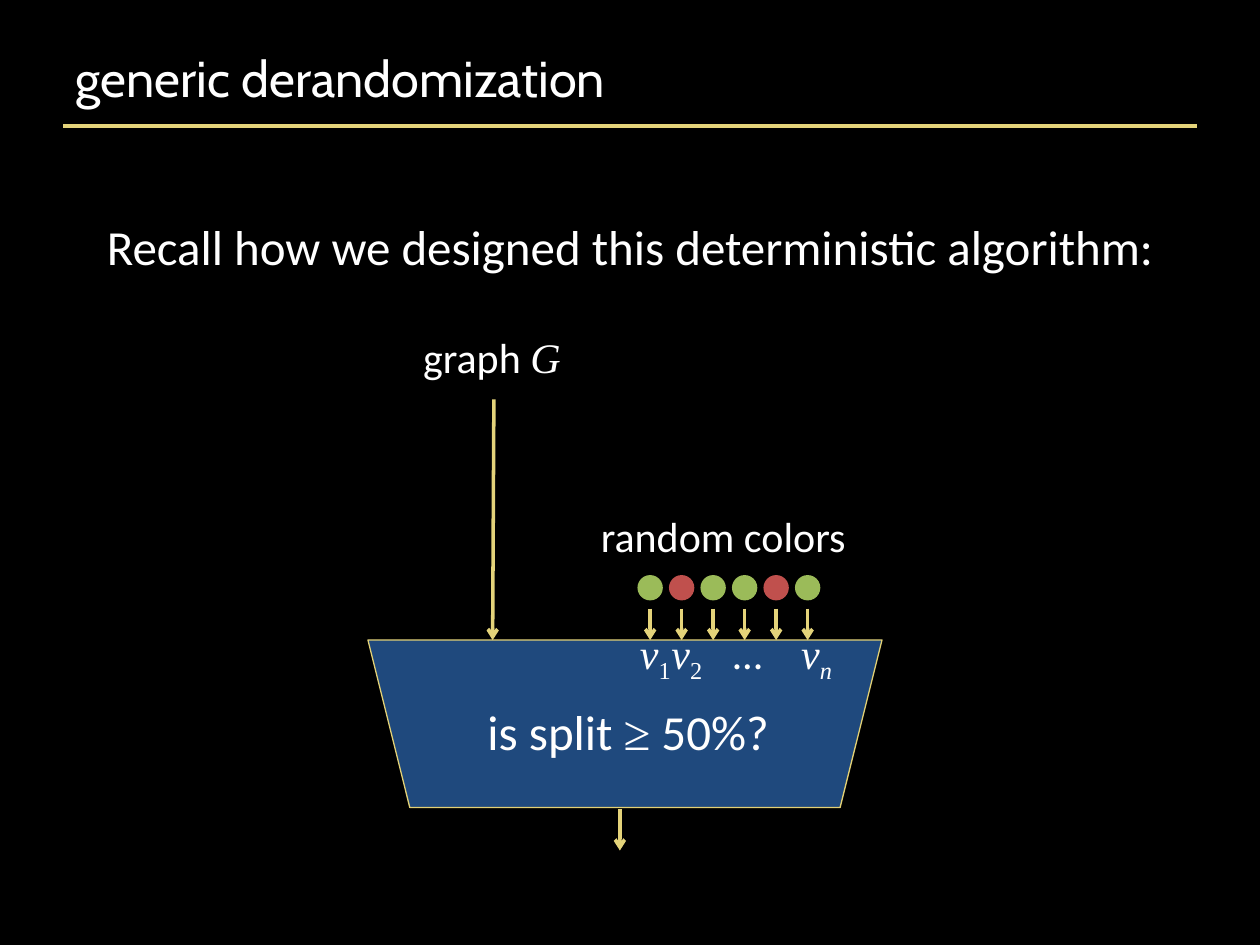
from dataclasses import dataclass

from lxml import etree
from pptx import Presentation
from pptx.dml.color import RGBColor
from pptx.enum.shapes import MSO_CONNECTOR, MSO_SHAPE
from pptx.enum.text import MSO_ANCHOR, MSO_AUTO_SIZE, PP_ALIGN
from pptx.oxml.ns import qn
from pptx.util import Inches, Pt

STRAIGHT = MSO_CONNECTOR.STRAIGHT
TRAPEZOID = MSO_SHAPE.TRAPEZOID
OVAL = MSO_SHAPE.OVAL
MIDDLE = MSO_ANCHOR.MIDDLE
GROW = MSO_AUTO_SIZE.SHAPE_TO_FIT_TEXT
LEFT = PP_ALIGN.LEFT
TITLE_ONLY = 5


@dataclass(frozen=True)
class Theme:
    background: str = "000000"
    text: str = "FFFFFF"
    arrow: str = "E4D37A"
    machine: str = "1F497D"
    machine_edge: str = "E2D075"
    green: str = "9BBB59"
    red: str = "C0504D"
    title_font: str = "Cabin"
    body_font: str = "Calibri"
    math_font: str = "Times New Roman"
    title_size: float = 28.8
    statement_size: float = 28
    label_size: float = 24


def color(hex_value):
    return RGBColor.from_string(hex_value)


def add_run(paragraph, text, *, font, size, fill, italic=False, subscript=False):
    run = paragraph.add_run()
    run.text = text
    run.font.name = font
    run.font.size = Pt(size)
    run.font.italic = italic
    run.font.color.rgb = color(fill)
    if subscript:
        run.font._element.set("baseline", "-25000")


class SlideBuilder:
    def __init__(self, slide, theme):
        self.slide = slide
        self.theme = theme
        slide.background.fill.solid()
        slide.background.fill.fore_color.rgb = color(theme.background)

    def title(self, text, left, top, width, height):
        shape = self.slide.shapes.title
        shape.left, shape.top = Inches(left), Inches(top)
        shape.width, shape.height = Inches(width), Inches(height)
        shape.text_frame.vertical_anchor = MIDDLE
        paragraph = shape.text_frame.paragraphs[0]
        paragraph.alignment = LEFT
        add_run(paragraph, text, font=self.theme.title_font,
                size=self.theme.title_size, fill=self.theme.text)

    def label(self, parts, left, top, width, height, size=None):
        """Add one line of text; parts are (text, format) pairs."""
        box = self.slide.shapes.add_textbox(
            Inches(left), Inches(top), Inches(width), Inches(height))
        box.text_frame.word_wrap = False
        box.text_frame.auto_size = GROW
        for text, changes in parts:
            style = {"font": self.theme.body_font, "fill": self.theme.text,
                     "size": size or self.theme.label_size, **changes}
            add_run(box.text_frame.paragraphs[0], text, **style)

    def line(self, start_x, start_y, end_x, end_y, arrowhead=True):
        connector = self.slide.shapes.add_connector(
            STRAIGHT, Inches(start_x), Inches(start_y), Inches(end_x), Inches(end_y))
        connector.line.color.rgb = color(self.theme.arrow)
        connector.line.width = Pt(2)
        if arrowhead:
            outline = connector.line._get_or_add_ln()
            etree.SubElement(outline, qn("a:tailEnd"), type="arrow")
        etree.SubElement(connector._element.spPr, qn("a:effectLst"))

    def shape(self, kind, left, top, width, height, fill, edge, edge_width, flip=False):
        shape = self.slide.shapes.add_shape(
            kind, Inches(left), Inches(top), Inches(width), Inches(height))
        shape.shadow.inherit = False
        shape.fill.solid()
        shape.fill.fore_color.rgb = color(fill)
        shape.line.color.rgb = color(edge)
        shape.line.width = Pt(edge_width)
        if flip:
            shape._element.spPr.xfrm.set("flipV", "1")


def main():
    presentation = Presentation()
    presentation.slide_width, presentation.slide_height = Inches(10), Inches(7.5)
    theme = Theme()
    slide = presentation.slides.add_slide(presentation.slide_layouts[TITLE_ONLY])
    builder = SlideBuilder(slide, theme)
    upright = {"font": theme.math_font}
    italic = {**upright, "italic": True}

    builder.line(0.5, 1, 9.5, 1, arrowhead=False)
    builder.title("generic derandomization", 0.5, 0.3, 9, 0.62)
    builder.label([("Recall how we designed this deterministic algorithm:", {})],
                  0.75, 1.67, 8.68, 0.57, theme.statement_size)

    machine_top, machine_bottom = 5.08, 6.42
    builder.shape(TRAPEZOID, 2.92, machine_top, 4.08, 1.33,
                  theme.machine, theme.machine_edge, 0.75, flip=True)
    builder.line(4.92, machine_bottom, 4.92, 6.75)
    builder.line(3.92, 3.17, 3.91, machine_top)

    first_center, spacing, diameter = 5.16, 0.25, 0.17
    green, red = theme.green, theme.red
    for index, fill in enumerate([green, red, green, green, red, green]):
        center = first_center + index * spacing
        builder.line(center, 4.83, center, machine_top)
        builder.shape(OVAL, center - diameter / 2, 4.58, diameter, diameter,
                      fill, fill, 2.25)

    vertices = [("1", upright, 4.98, 0.45), ("2", upright, 5.23, 0.45),
                ("n", italic, 6.26, 0.48)]
    for subscript, style, left, width in vertices:
        builder.label([("v", italic), (subscript, {**style, "subscript": True})],
                      left, 4.93, width, 0.51)
    builder.label([("…", {})], 5.72, 4.93, 0.43, 0.51)

    builder.label([("random colors", {})], 4.67, 4, 2.27, 0.51)
    builder.label([("is split ", {}), ("≥", upright), (" 50%?", {})],
                  3.77, 5.52, 2.51, 0.57, theme.statement_size)
    builder.label([("graph ", {}), ("G", italic)], 3.26, 2.58, 1.4, 0.51)

    presentation.save("out.pptx")


if __name__ == "__main__":
    main()
